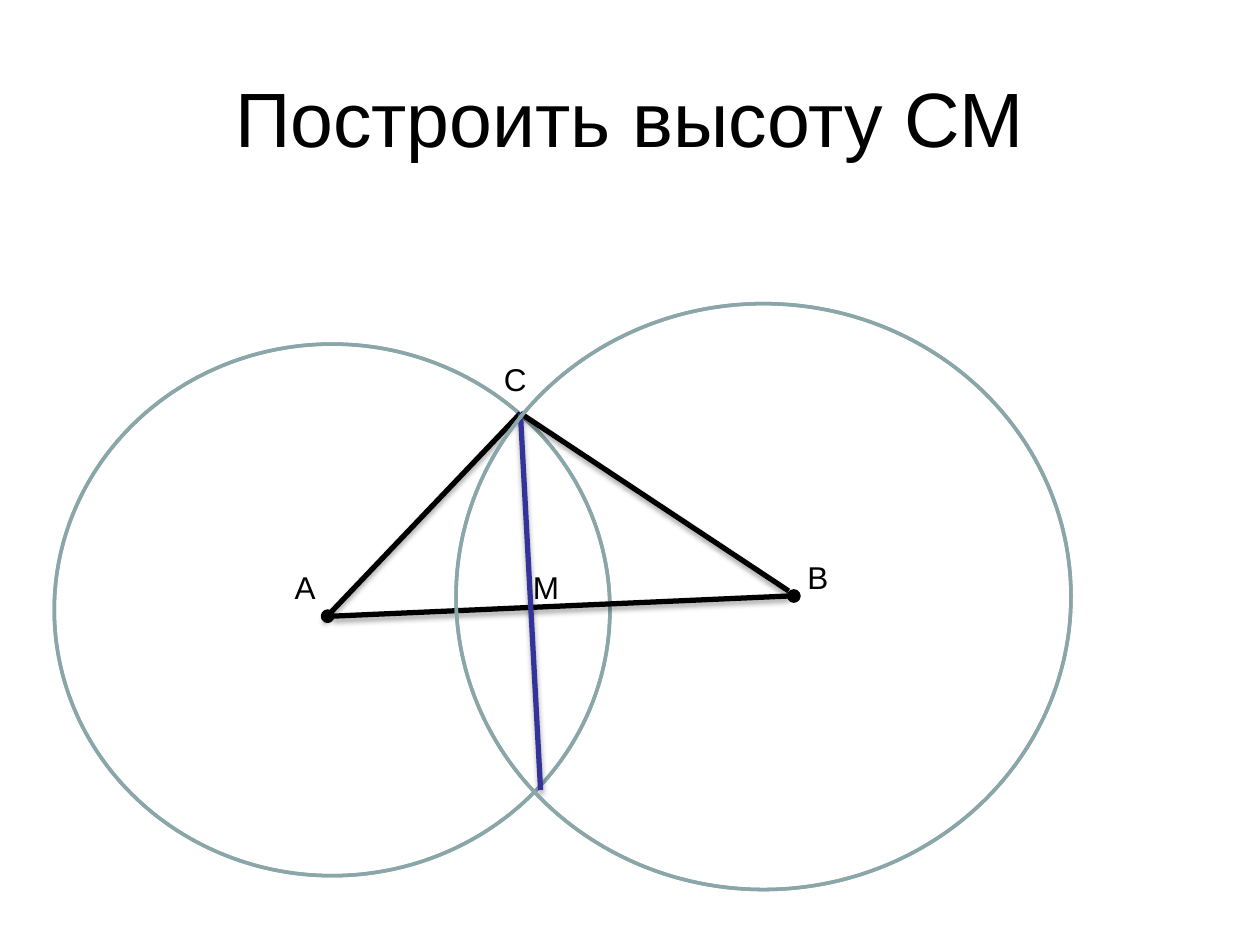
from lxml import etree
from pptx import Presentation
from pptx.dml.color import RGBColor
from pptx.enum import shapes, text
from pptx.oxml.ns import qn
from pptx.util import Pt

# Content: all lengths in points
TITLE = "Построить высоту СМ"
TITLE_BOX = (36, 21.6, 648, 90)
VERTICES = [(453.6, 340.6), (187.2, 352.1)]  # centres of the dots B and A
CIRCLE_A = (31, 196.6, 317.5, 303.8)
CIRCLE_B = (260.6, 173.5, 351.4, 334.8)
APEX = (297.4, 236.2)
SEGMENTS = [  # start, end, colour name
    ((190.1, 352.1), (450.7, 340.6), "side"),
    ((185, 354.2), APEX, "side"),
    (APEX, (450.7, 337.7), "side"),
    (APEX, (308.9, 451.4), "height"),
]
LABELS = [  # text, left, top, width
    ("А", 161.3, 321.1, 25.2),
    ("В", 454.3, 315.4, 24.5),
    ("М", 297.4, 321.1, 30.2),
    ("С", 280.8, 202.3, 24.5),
]

THEME = {
    "font": "Arial", "title_size": 44, "label_size": 18,
    "dot_size": 5.8, "label_height": 28.8,
    "outline": 2, "segment": 3,
    "side": "000000", "height": "333399",
    "circle_fill": "BBE0E3", "circle_line": "8AA6A8",
}
SHADOW = {"blurRad": Pt(3.1), "dist": Pt(1.8), "dir": 90 * 60000, "rotWithShape": 0}


def rgb(name):
    return RGBColor.from_string(THEME[name])


def write(frame, words, size, frame_format):
    for name, value in frame_format.items():
        setattr(frame, name, value)
    paragraph = frame.paragraphs[0]
    paragraph.text = words
    font_format = {"name": THEME["font"], "size": Pt(THEME[size])}
    for name, value in font_format.items():
        setattr(paragraph.font, name, value)
    paragraph.font.color.rgb = rgb("side")
    return paragraph


def add_outlined(slide, kind, box, fill, line):
    shape = slide.shapes.add_shape(kind, *map(Pt, box))
    shape.shadow.inherit = False
    shape.fill.solid()
    shape.fill.fore_color.rgb = rgb(fill)
    shape.line.color.rgb = rgb(line)
    shape.line.width = Pt(THEME["outline"])
    return shape


def add_circle(slide, box):
    ring = add_outlined(slide, shapes.MSO_SHAPE.DONUT, box, "circle_fill", "circle_line")
    ring.adjustments[0] = 0


def add_segment(slide, start, end, color):
    segment = slide.shapes.add_connector(
        shapes.MSO_CONNECTOR.STRAIGHT, *map(Pt, start + end))
    segment.line.color.rgb = rgb(color)
    segment.line.width = Pt(THEME["segment"])
    # Soft shadow straight below the line
    effects = etree.SubElement(segment._element.spPr, qn("a:effectLst"))
    shadow = etree.SubElement(effects, qn("a:outerShdw"),
                              {name: str(value) for name, value in SHADOW.items()})
    shade = etree.SubElement(shadow, qn("a:srgbClr"), val="000000")
    etree.SubElement(shade, qn("a:alpha"), val="35000")


def main():
    presentation = Presentation()
    presentation.slide_width, presentation.slide_height = Pt(720), Pt(540)
    slide = presentation.slides.add_slide(presentation.slide_layouts[5])

    # Title
    title = slide.shapes.title
    for side, value in zip(("left", "top", "width", "height"), TITLE_BOX):
        setattr(title, side, Pt(value))
    heading = write(title.text_frame, TITLE, "title_size",
                    {"vertical_anchor": text.MSO_ANCHOR.MIDDLE, "word_wrap": True})
    heading.alignment = text.PP_ALIGN.CENTER

    # Dots at the base of the triangle
    dot = THEME["dot_size"]
    for x, y in VERTICES:
        add_outlined(slide, shapes.MSO_SHAPE.OVAL,
                     (x - dot / 2, y - dot / 2, dot, dot), "side", "side")

    # Triangle and height, between the two compass circles
    add_circle(slide, CIRCLE_A)
    for start, end, color in SEGMENTS:
        add_segment(slide, start, end, color)

    # Vertex labels
    for letter, left, top, width in LABELS:
        label = slide.shapes.add_textbox(
            *map(Pt, (left, top, width, THEME["label_height"])))
        write(label.text_frame, letter, "label_size",
              {"word_wrap": False, "auto_size": text.MSO_AUTO_SIZE.SHAPE_TO_FIT_TEXT})

    add_circle(slide, CIRCLE_B)
    presentation.save("out.pptx")


if __name__ == "__main__":
    main()
